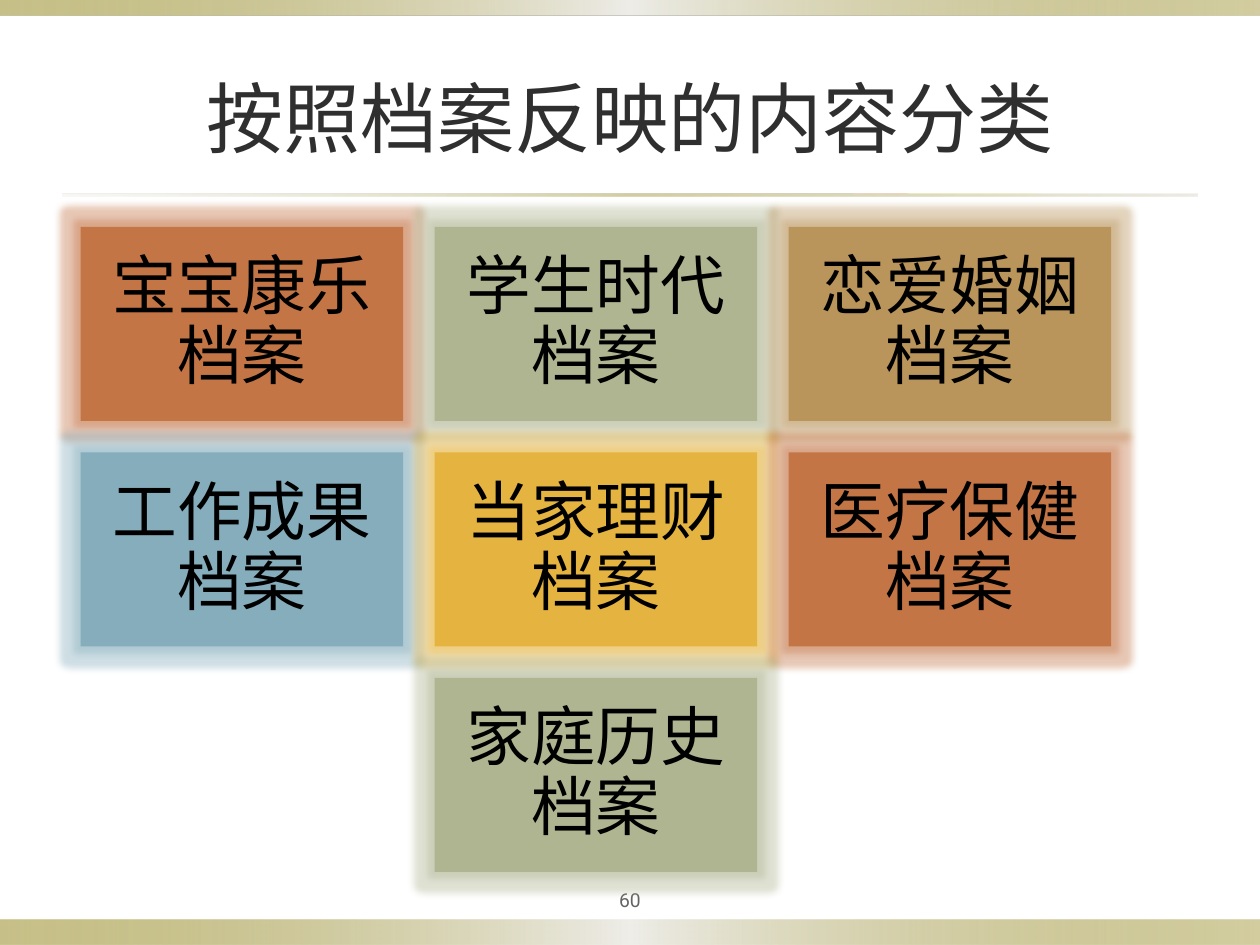
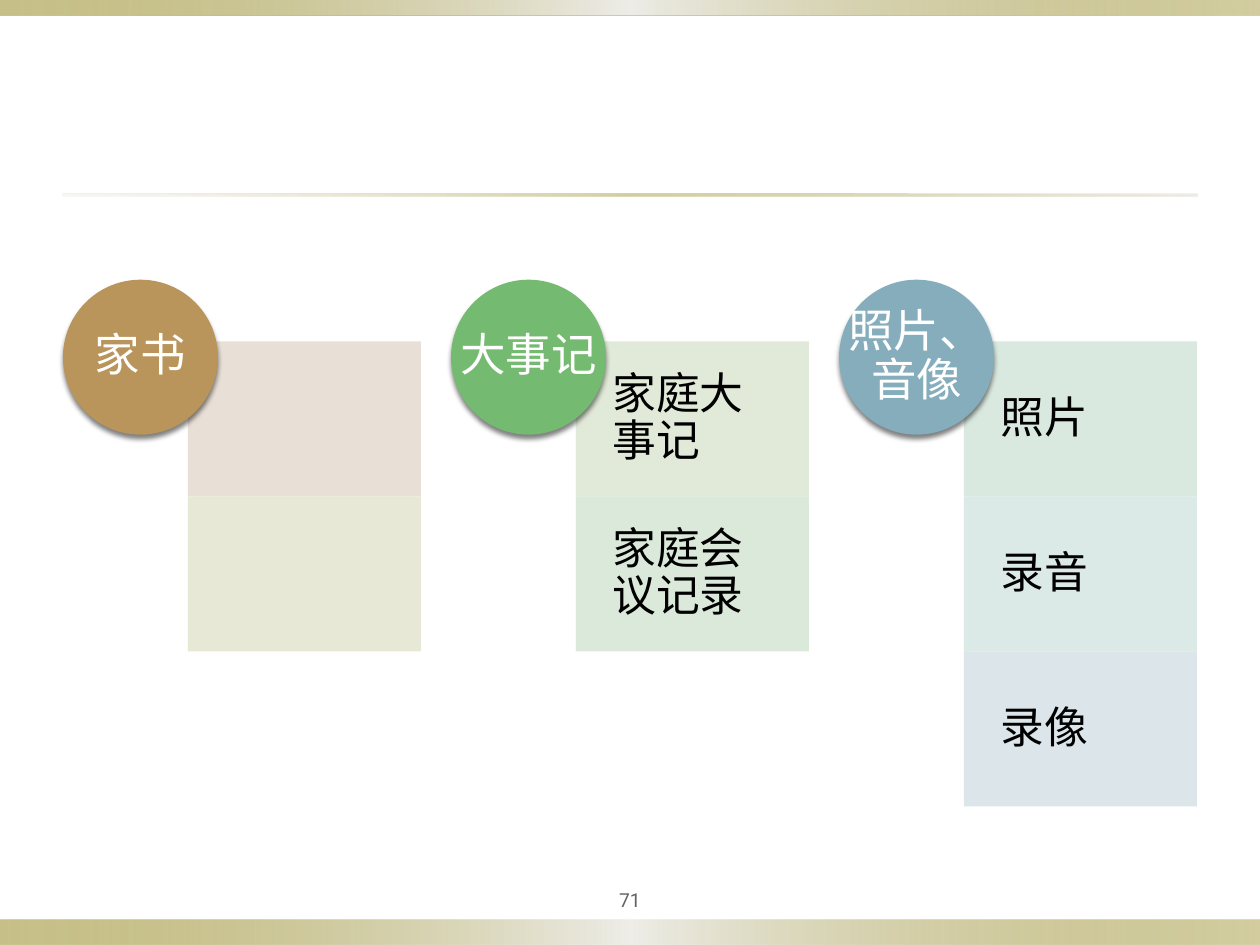
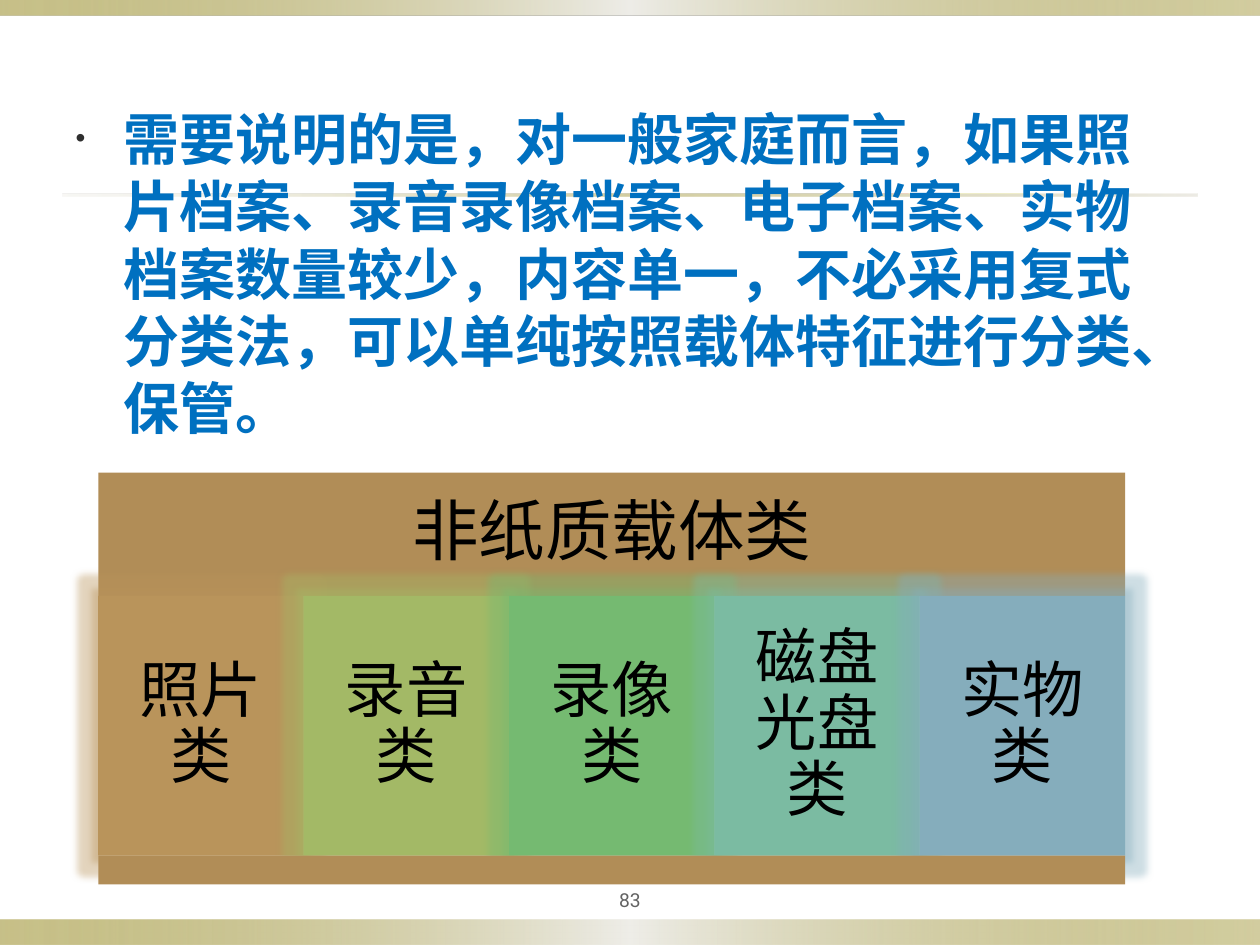
from lxml.etree import SubElement
from pptx import Presentation
from pptx.dml.color import RGBColor
from pptx.enum.shapes import MSO_SHAPE
from pptx.enum.text import MSO_ANCHOR, PP_ALIGN
from pptx.oxml import parse_xml
from pptx.oxml.ns import nsdecls, qn
from pptx.util import Inches, Pt

WHITE = RGBColor(0xFF, 0xFF, 0xFF)
BLACK = RGBColor(0, 0, 0)
INK = RGBColor(0x2F, 0x2F, 0x2F)
GREY = RGBColor(0x63, 0x63, 0x63)
BLUE = RGBColor(0x00, 0x70, 0xC0)
RUST = RGBColor(0xC4, 0x75, 0x46)
SAGE = RGBColor(0xAF, 0xB5, 0x91)
TAN = RGBColor(0xB9, 0x94, 0x5B)
BROWN = RGBColor(0xB1, 0x8D, 0x57)
STEEL = RGBColor(0x85, 0xAD, 0xBC)
GOLD = RGBColor(0xE5, 0xB4, 0x40)
OLIVE = RGBColor(0xA3, 0xB9, 0x66)
GREEN = RGBColor(0x75, 0xBA, 0x71)
TEAL = RGBColor(0x7B, 0xBB, 0xA2)
PINK = RGBColor(0xE6, 0xDC, 0xD2)
CREAM = RGBColor(0xE6, 0xE6, 0xD3)
LIME = RGBColor(0xDE, 0xE7, 0xD4)
MINT = RGBColor(0xD7, 0xE7, 0xD5)
JADE = RGBColor(0xD7, 0xE7, 0xDD)
AQUA = RGBColor(0xD8, 0xE7, 0xE5)
MIST = RGBColor(0xD9, 0xE3, 0xE7)
KHAKI = RGBColor(0x91, 0x84, 0x15)
PALE = RGBColor(0xEE, 0xED, 0xE8)
SAND = RGBColor(0xDC, 0xD9, 0xCC)

# Gradient stops: position, colour, opacity in percent
BAND = [(0, KHAKI, 50), (50, PALE, 100), (100, KHAKI, 40)]
RULE = [(0, SAND, 20), (50, KHAKI, 40), (100, SAND, 50)]
TITLE, LIST, BLANK = 5, 1, 6


def clear(color, alpha):
    """Return the XML of a colour with an opacity in percent."""
    return f'<a:srgbClr val="{color}"><a:alpha val="{alpha * 1000}"/></a:srgbClr>'


class Deck:
    latin = "Roboto"
    asian = "Noto Sans CJK SC"

    def __init__(self):
        self.prs = Presentation()
        self.prs.slide_width = Inches(10)
        self.prs.slide_height = Inches(7.5)

    def start(self, layout, number):
        """Add a slide with bands, rule and page number."""
        self.slide = self.prs.slides.add_slide(self.prs.slide_layouts[layout])
        self.shapes = self.slide.shapes
        self.blend(0, 7.3, 10, 0.2, BAND)
        self.blend(0, 0, 10, 0.12, BAND)
        self.blend(0.5, 1.54, 9, 0.02, RULE)
        self.note(4.5, 7, 1, 0.31, str(number), 11, GREY, 0.05)

    def place(self, item, x, y, w, h):
        item.left, item.top = Inches(x), Inches(y)
        item.width, item.height = Inches(w), Inches(h)

    def style(self, para, size, color, name=None, bold=False):
        font = para.font
        font.size, font.bold, font.name = Pt(size), bold, name or self.latin
        font.color.rgb = color
        SubElement(font._rPr, qn("a:ea")).set("typeface", self.asian)

    def label(self, item, text, size, color, pads, align=PP_ALIGN.CENTER):
        frame = item.text_frame
        frame.word_wrap = True
        frame.vertical_anchor = MSO_ANCHOR.MIDDLE
        (frame.margin_left, frame.margin_top,
         frame.margin_right, frame.margin_bottom) = map(Inches, pads)
        para = frame.paragraphs[0]
        para.text, para.alignment, para.line_spacing = text, align, 0.9
        self.style(para, size, color)

    def plain(self, kind, x, y, w, h):
        item = self.shapes.add_shape(kind, Inches(x), Inches(y), Inches(w), Inches(h))
        item.shadow.inherit = False
        item.line.fill.background()
        return item

    def blend(self, x, y, w, h, stops):
        item = self.plain(MSO_SHAPE.RECTANGLE, x, y, w, h)
        marks = "".join(f'<a:gs pos="{pos * 1000}">{clear(color, alpha)}</a:gs>'
                        for pos, color, alpha in stops)
        item.element.spPr.insert(2, parse_xml(
            f'<a:gradFill {nsdecls("a")} rotWithShape="1"><a:gsLst>{marks}</a:gsLst>'
            '<a:lin ang="0" scaled="0"/></a:gradFill>'))

    def box(self, x, y, w, h, color, kind=MSO_SHAPE.RECTANGLE):
        item = self.plain(kind, x, y, w, h)
        item.fill.solid()
        item.fill.fore_color.rgb = color
        return item

    def effect(self, item, tag, color, alpha, **attrs):
        words = " ".join(f'{key}="{val}"' for key, val in attrs.items())
        item.element.spPr.find(qn("a:effectLst")).append(parse_xml(
            f'<a:{tag} {nsdecls("a")} {words}>{clear(color, alpha)}</a:{tag}>'))

    def tile(self, x, y, w, h, color, text, size):
        """Add a labelled box with a soft glow."""
        item = self.box(x, y, w, h, color)
        self.effect(item, "glow", color, 40, rad=Pt(8))
        self.label(item, text, size, BLACK, [0.15] * 4)

    def cell(self, x, y, w, h, color, text):
        item = self.box(x, y, w, h, color)
        shade = item.element.spPr.find(qn("a:solidFill"))[0]
        SubElement(shade, qn("a:alpha")).set("val", "90000")
        if text:
            self.label(item, text, 25, BLACK, (0.29, 0.19, 0.19, 0.19), PP_ALIGN.LEFT)

    def disc(self, x, y, size, color, text):
        item = self.box(x, y, size, size, color, MSO_SHAPE.OVAL)
        self.effect(item, "outerShdw", BLACK, 50, blurRad=Pt(2.8),
                    dist=Pt(2.5), dir=5400000, rotWithShape=0)
        self.note(x, y, size, size, text, 26, WHITE, 0)

    def note(self, x, y, w, h, text, size, color, pad):
        item = self.shapes.add_textbox(Inches(x), Inches(y), Inches(w), Inches(h))
        self.label(item, text, size, color, [pad] * 4)

    def title(self, text):
        item = self.shapes.title
        self.place(item, 0.5, 0.3, 9, 1.25)
        item.text_frame.text = text
        self.style(item.text_frame.paragraphs[0], 44, INK)

    def point(self, text):
        """Fill the body with one bullet, in front of the rule."""
        head = self.shapes.title.element
        head.getparent().remove(head)
        item = self.slide.placeholders[1]
        self.place(item, 0.5, 0.78, 9, 6.09)
        self.shapes.element.append(item.element)
        para = item.text_frame.paragraphs[0]
        para.text = text
        para.space_before = Pt(0)
        props = para._p.get_or_add_pPr()
        props.set("marL", str(Inches(0.38)))
        props.set("indent", str(Inches(-0.38)))
        tint = SubElement(props, qn("a:buClr"))
        SubElement(tint, qn("a:srgbClr")).set("val", str(INK))
        SubElement(props, qn("a:buSzPct")).set("val", "50000")
        SubElement(props, qn("a:buChar")).set("char", "•")
        self.style(para, 32, BLUE, self.asian, True)


def topics(deck):
    deck.start(TITLE, 60)
    deck.title("按照档案反映的内容分类")
    rows = [
        [("宝宝康乐档案", RUST), ("学生时代档案", SAGE), ("恋爱婚姻档案", TAN)],
        [("工作成果档案", STEEL), ("当家理财档案", GOLD), ("医疗保健档案", RUST)],
        [("家庭历史档案", SAGE)],
    ]
    wide, high, gap = 2.56, 1.54, 0.25
    for row, items in enumerate(rows):
        first = (3 - len(items)) / 2
        for col, (text, color) in enumerate(items):
            deck.tile(0.64 + (first + col) * (wide + gap), 1.8 + row * (high + gap),
                      wide, high, color, text, 37)


def records(deck):
    deck.start(BLANK, 71)
    groups = [
        ("家书", TAN, [("", PINK), ("", CREAM)]),
        ("大事记", GREEN, [("家庭大事记", LIME), ("家庭会议记录", MINT)]),
        ("照片、音像", STEEL, [("照片", JADE), ("录音", AQUA), ("录像", MIST)]),
    ]
    size = 1.23
    for col, (name, color, cells) in enumerate(groups):
        left = 0.5 + 3.08 * col
        for row, (text, shade) in enumerate(cells):
            deck.cell(left + 0.99, 2.71 + row * size, 1.85, size, shade, text)
        deck.disc(left, 2.22, size, color, name)


def media(deck):
    deck.start(LIST, 83)
    deck.point("需要说明的是，对一般家庭而言，如果照片档案、录音录像档案、电子档案、"
               "实物档案数量较少，内容单一，不必采用复式分类法，可以单纯按照载体特征"
               "进行分类、保管。")
    left, wide = 0.78, 1.63
    head = deck.box(left, 3.75, 5 * wide, 0.98, BROWN)
    deck.label(head, "非纸质载体类", 38, BLACK, [0.16] * 4)
    kinds = [("照片类", TAN), ("录音类", OLIVE), ("录像类", GREEN),
             ("磁盘光盘类", TEAL), ("实物类", STEEL)]
    for col, (text, color) in enumerate(kinds):
        deck.tile(left + col * wide, 4.73, wide, 2.06, color, text, 35)
    deck.box(left, 6.79, 5 * wide, 0.23, BROWN)


def main():
    deck = Deck()
    topics(deck)
    records(deck)
    media(deck)
    deck.prs.save("out.pptx")


if __name__ == "__main__":
    main()
